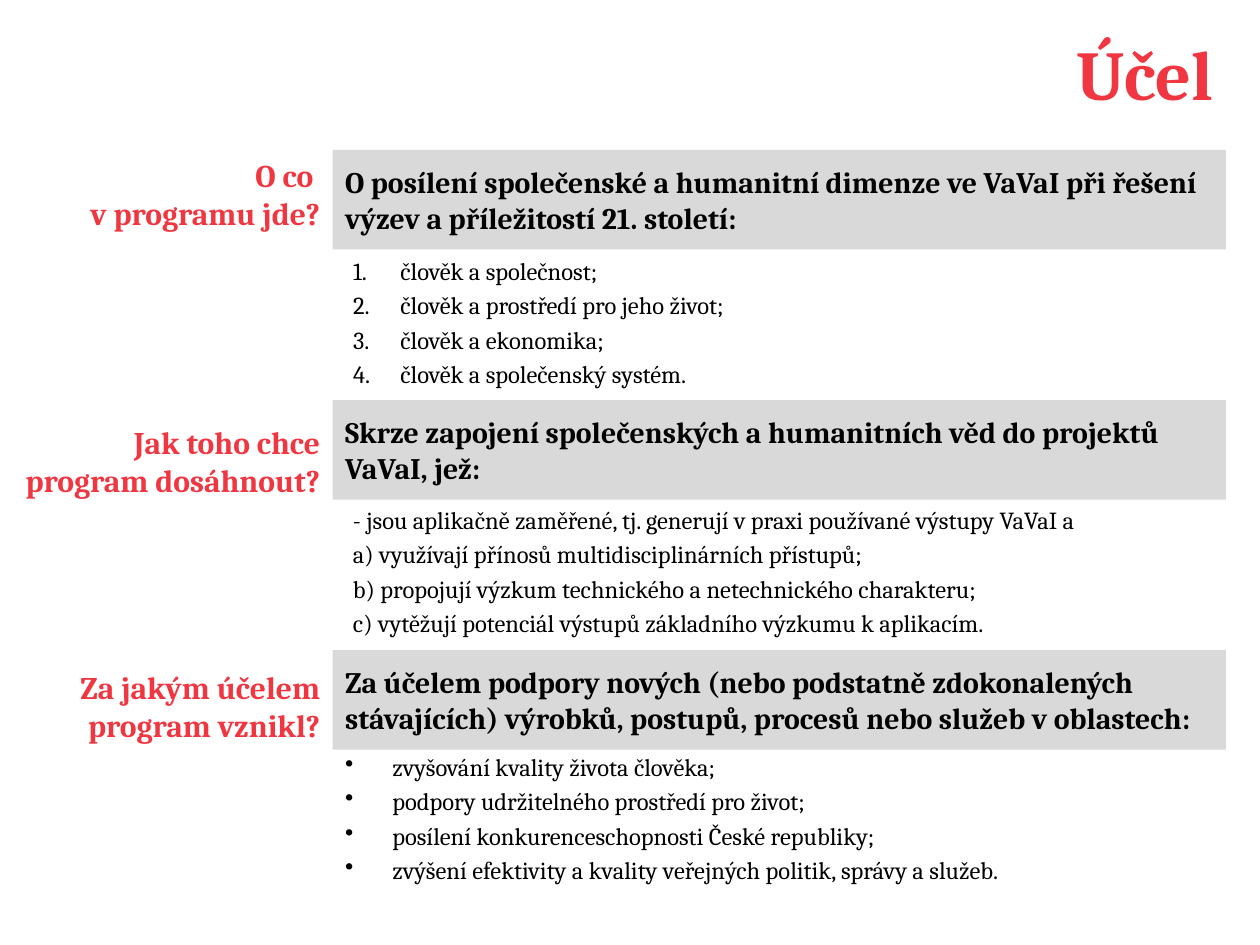
from dataclasses import dataclass
from lxml.etree import SubElement
from pptx import Presentation
from pptx.dml.color import RGBColor
from pptx.enum.shapes import MSO_SHAPE as Shape
from pptx.enum.text import MSO_ANCHOR as Anchor, MSO_AUTO_SIZE as AutoSize, PP_ALIGN as Align
from pptx.oxml.ns import qn
from pptx.util import Pt


@dataclass(frozen=True)
class Theme:
    """Colours, font and type sizes of the slide."""
    font: str = "Cambria"
    red: RGBColor = RGBColor(0xF0, 0x37, 0x41)
    black: RGBColor = RGBColor(0, 0, 0)
    grey: RGBColor = RGBColor(0xD9, 0xD9, 0xD9)
    title: int = 40
    label: int = 18
    heading: int = 17
    item: int = 14


THEME = Theme()
COLUMN, WIDTH = 190.1, 510.5
BAR_TOP, BAR_HEIGHT, PITCH = 85.7, 56.9, 142.9

NUMBERED = (31.5, -27, "buAutoNum", {"type": "arabicPeriod"})
PLAIN = (4.5, 0, "buNone", {})
BULLETED = (27, -27, "buChar", {"char": "•"})

SECTIONS = [
    ("O co \vv programu jde?", (31, 85.7),
     "O posílení společenské a humanitní dimenze ve VaVaI při řešení výzev a příležitostí 21. století:",
     NUMBERED, 142.6,
     ["člověk a společnost;", "člověk a prostředí pro jeho život;",
      "člověk a ekonomika;", "člověk a společenský systém."]),
    ("Jak toho chce program dosáhnout?", (0, 238.3),
     "Skrze zapojení společenských a humanitních věd do projektů VaVaI, jež:",
     PLAIN, 285.1,
     ["- jsou aplikačně zaměřené, tj. generují v praxi používané výstupy VaVaI a",
      "a) využívají přínosů multidisciplinárních přístupů;",
      "b) propojují výzkum technického a netechnického charakteru;",
      "c) vytěžují potenciál výstupů základního výzkumu k aplikacím."]),
    ("Za jakým účelem program vznikl?", (14.4, 378),
     "Za účelem podpory nových (nebo podstatně zdokonalených stávajících) výrobků, postupů, procesů nebo služeb v oblastech:",
     BULLETED, 426.2,
     ["zvyšování kvality života člověka;", "podpory udržitelného prostředí pro život;",
      "posílení konkurenceschopnosti České republiky;",
      "zvýšení efektivity a kvality veřejných politik, správy a služeb."]),
]


def place(shape, left, top, width, height):
    """Move and size a shape, in points."""
    shape.left, shape.top, shape.width, shape.height = map(Pt, (left, top, width, height))


def write(shape, text, size, color, bold=True, align=Align.LEFT, anchor=Anchor.TOP):
    """Fill a shape with wrapped paragraphs, one per line of text."""
    frame = shape.text_frame
    frame.text = text
    frame.word_wrap = True
    frame.auto_size = AutoSize.NONE
    frame.vertical_anchor = anchor
    for para in frame.paragraphs:
        para.alignment = align
        font = para.font
        font.name, font.size, font.bold = THEME.font, Pt(size), bold
        font.color.rgb = color


def add_label(page, text, left, top):
    """Add a red question that ends at the content column."""
    box = page.shapes.add_textbox(Pt(left), Pt(top), Pt(COLUMN - left), Pt(51))
    write(box, text, THEME.label, THEME.red, align=Align.RIGHT)


def add_bar(page, text, top):
    """Add a grey heading bar."""
    bar = page.shapes.add_shape(Shape.RECTANGLE, Pt(COLUMN), Pt(top), Pt(WIDTH), Pt(BAR_HEIGHT))
    bar.shadow.inherit = False
    bar.fill.solid()
    bar.fill.fore_color.rgb = THEME.grey
    bar.line.fill.background()
    write(bar, text, THEME.heading, THEME.black, anchor=Anchor.MIDDLE)


def fill_list(box, items, style, top):
    """Place a box and fill it with items in the given list style."""
    margin, indent, marker, attributes = style
    place(box, COLUMN, top, WIDTH, 89)
    box.text_frame.text = "\n".join(items)
    write_items = box.text_frame.paragraphs
    write(box, "\n".join(items), THEME.item, THEME.black, bold=False)
    write_items = box.text_frame.paragraphs
    for index, para in enumerate(write_items):
        para.space_before = Pt(2.8 if index else 0)
        properties = para._p.get_or_add_pPr()
        properties.set("marL", str(Pt(margin)))
        properties.set("indent", str(Pt(indent)))
        bullet = SubElement(properties, qn(f"a:{marker}"), attributes)
        properties.find(qn("a:defRPr")).addprevious(bullet)


def main():
    """Build and save the slide."""
    deck = Presentation()
    deck.slide_width, deck.slide_height = Pt(720), Pt(540)
    page = deck.slides.add_slide(deck.slide_layouts[1])
    title, body = page.placeholders
    place(title, 8.6, 0, 692, 82.8)
    write(title, "Účel", THEME.title, THEME.red, align=Align.RIGHT, anchor=Anchor.MIDDLE)
    for index, (label, corner, heading, style, top, items) in enumerate(SECTIONS):
        add_bar(page, heading, BAR_TOP + index * PITCH)
        add_label(page, label, *corner)
        box = page.shapes.add_textbox(0, 0, 0, 0) if index else body
        fill_list(box, items, style, top)
    deck.save("out.pptx")


if __name__ == "__main__":
    main()
